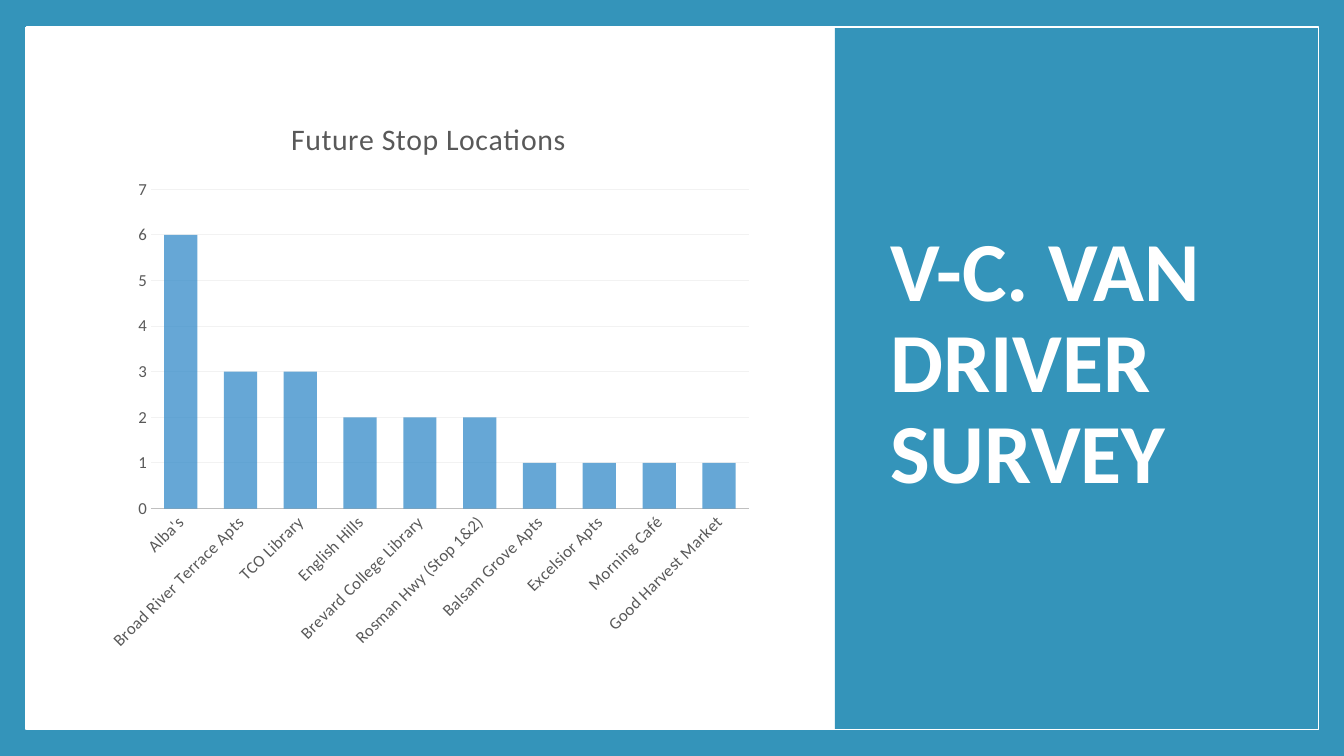
import pptx
import pptx.chart.data
import pptx.dml.color
import pptx.enum.chart
import pptx.enum.shapes
import pptx.enum.text
import pptx.oxml
import pptx.oxml.ns
import pptx.util
from pptx.util import Inches, Pt

COLORS = {"teal": "3494BA", "white": "FFFFFF", "bar": "2683C6",
          "text": "595959", "axis": "BFBFBF", "grid": "F2F2F2"}
FONT = "Calibri"
STOPS = {
    "Alba's": 6,
    "Broad River Terrace Apts": 3,
    "TCO Library": 3,
    "English Hills": 2,
    "Brevard College Library": 2,
    "Rosman Hwy (Stop 1&2)": 2,
    "Balsam Grove Apts": 1,
    "Excelsior Apts": 1,
    "Morning Café": 1,
    "Good Harvest Market": 1,
}


def rgb(name):
    return pptx.dml.color.RGBColor.from_string(COLORS[name])


def add_rectangle(left, top, width, height, fill=None, line=None):
    rectangle = slide.shapes.add_shape(
        pptx.enum.shapes.MSO_SHAPE.RECTANGLE,
        Inches(left), Inches(top), Inches(width), Inches(height))
    rectangle.shadow.inherit = False
    if fill:
        rectangle.fill.solid()
        rectangle.fill.fore_color.rgb = rgb(fill)
    else:
        rectangle.fill.background()
    if line:
        rectangle.line.color.rgb = rgb(line)
        rectangle.line.width = Pt(1)
    else:
        rectangle.line.fill.background()


presentation = pptx.Presentation()
presentation.slide_width = Inches(13.33)
presentation.slide_height = Inches(7.5)
slide = presentation.slides.add_slide(presentation.slide_layouts[5])
slide.background.fill.solid()
slide.background.fill.fore_color.rgb = rgb("teal")

# White page and teal title panel
add_rectangle(0.25, 0.27, 12.82, 6.97, fill="white")
add_rectangle(8.28, 0.26, 4.8, 6.98, fill="teal")

# Survey title, brought in front of the panel
survey_title = slide.shapes.title
slide.shapes._spTree.append(survey_title._element)
survey_title.left, survey_title.top = Inches(8.73), Inches(0.67)
survey_title.width, survey_title.height = Inches(3.91), Inches(5.91)
title_frame = survey_title.text_frame
title_frame.text = "V-C. VAN DRIVER SURVEY"
title_frame.word_wrap = True
title_frame.auto_size = pptx.enum.text.MSO_AUTO_SIZE.NONE
title_frame.vertical_anchor = pptx.enum.text.MSO_ANCHOR.MIDDLE
title_line = title_frame.paragraphs[0]
title_line.alignment = pptx.enum.text.PP_ALIGN.LEFT
title_line.line_spacing = 0.9
title_line.font.name = FONT
title_line.font.size = Pt(60)
title_line.font.bold = True
title_line.font.color.rgb = rgb("white")

# Thin white frame
add_rectangle(0.26, 0.27, 12.82, 6.97, line="white")

# Column chart of the stops
stop_data = pptx.chart.data.CategoryChartData()
stop_data.categories = list(STOPS)
stop_data.add_series("Future Stop Locations", list(STOPS.values()))
stop_chart = slide.shapes.add_chart(
    pptx.enum.chart.XL_CHART_TYPE.COLUMN_CLUSTERED,
    Inches(0.94), Inches(0.96), Inches(6.62), Inches(5.61), stop_data).chart
stop_chart.font.name = FONT
stop_chart.font.size = Pt(10)
stop_chart.has_legend = False
stop_chart.has_title = True
stop_chart.chart_title.include_in_layout = False
heading = stop_chart.chart_title.text_frame
heading.text = "Future Stop Locations"
heading_font = heading.paragraphs[0].font
heading_font.name = FONT
heading_font.size = Pt(21.3)
heading_font.bold = False
heading_font.color.rgb = rgb("text")
heading_font._element.set("spc", "50")

# Translucent bars
bars = stop_chart.plots[0]
bars.vary_by_categories = False
bars.gap_width = 80
bars.overlap = 25
bar_fill = bars.series[0].format.fill
bar_fill.solid()
bar_fill.fore_color.rgb = rgb("bar")
bar_color = bars.series[0]._element.find(".//" + pptx.oxml.ns.qn("a:srgbClr"))
bar_color.append(pptx.oxml.parse_xml(
    f'<a:alpha {pptx.oxml.ns.nsdecls("a")} val="70000"/>'))

# Axes
stop_axis, count_axis = stop_chart.category_axis, stop_chart.value_axis
for axis in (stop_axis, count_axis):
    axis.major_tick_mark = pptx.enum.chart.XL_TICK_MARK.NONE
    axis.minor_tick_mark = pptx.enum.chart.XL_TICK_MARK.NONE
    axis.tick_labels.font.name = FONT
    axis.tick_labels.font.size = Pt(12)
    axis.tick_labels.font.color.rgb = rgb("text")
stop_axis.format.line.color.rgb = rgb("axis")
stop_axis.format.line.width = Pt(1.25)
stop_axis._element.find(".//" + pptx.oxml.ns.qn("a:bodyPr")).set("rot", "-2700000")
stop_axis.tick_labels.font._element.set("spc", "20")
count_axis.format.line.fill.background()
count_axis.minimum_scale = 0
count_axis.maximum_scale = 7
count_axis.major_unit = 1
count_axis.major_gridlines.format.line.color.rgb = rgb("grid")
count_axis.major_gridlines.format.line.width = Pt(0.75)

presentation.save("out.pptx")
